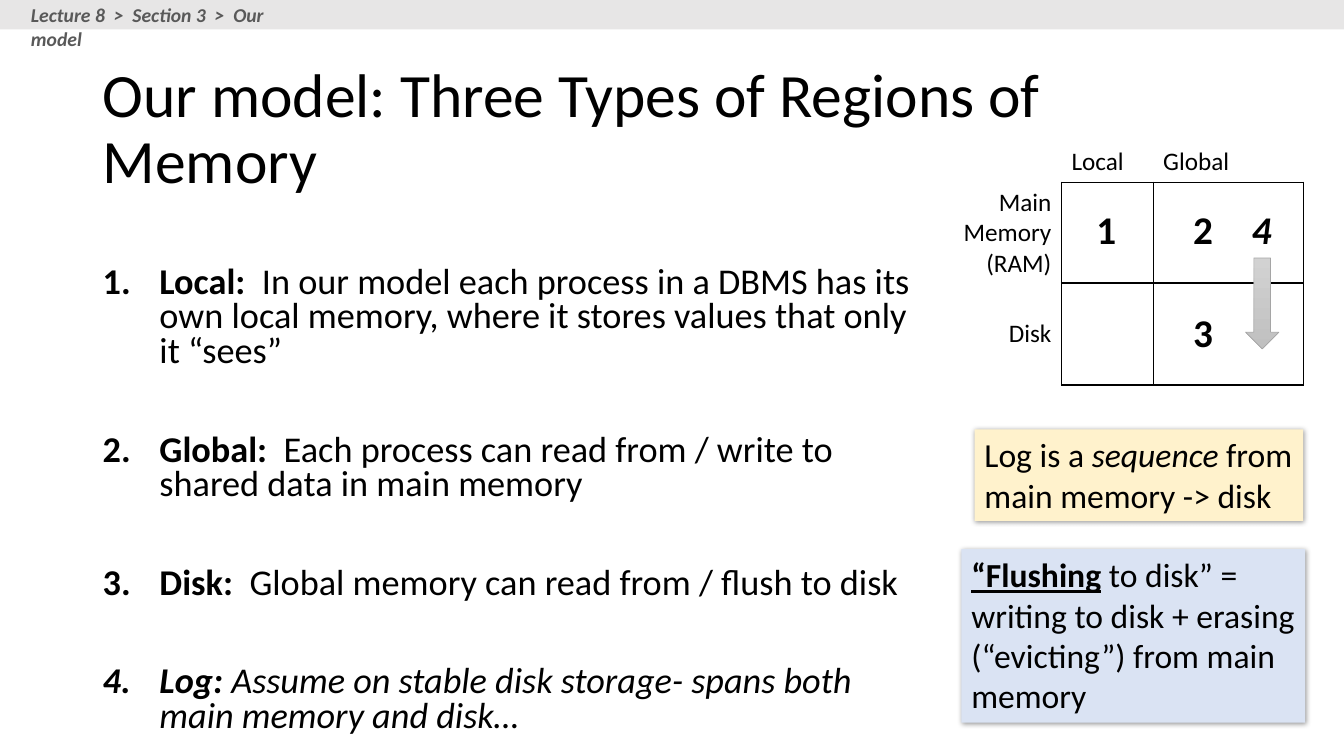
from lxml import etree
from pptx import Presentation
from pptx.dml.color import RGBColor
from pptx.enum.shapes import MSO_SHAPE
from pptx.enum.text import MSO_ANCHOR, PP_ALIGN
from pptx.oxml.ns import qn
from pptx.util import Cm, Pt

RECTANGLE = MSO_SHAPE.RECTANGLE
DOWN_ARROW = MSO_SHAPE.DOWN_ARROW
TOP = MSO_ANCHOR.TOP
MIDDLE = MSO_ANCHOR.MIDDLE
BOTTOM = MSO_ANCHOR.BOTTOM
LEFT = PP_ALIGN.LEFT
RIGHT = PP_ALIGN.RIGHT

BLACK = RGBColor(0x00, 0x00, 0x00)
DARK_GRAY = RGBColor(0x59, 0x59, 0x59)
BAR_GRAY = RGBColor(0xE7, 0xE6, 0xE6)
ARROW_LIGHT = RGBColor(0xD2, 0xD2, 0xD2)
ARROW_DARK = RGBColor(0xC0, 0xC0, 0xC0)
ARROW_LINE = RGBColor(0xA5, 0xA5, 0xA5)
CREAM = RGBColor(0xFF, 0xF2, 0xCC)
PALE_BLUE = RGBColor(0xDA, 0xE3, 0xF3)

FONT = "Calibri"
NO_STYLE = "{2D5ABB26-0587-4C30-8999-92F81FD0307C}"

REGIONS = [
    ("Local: ", " In our model each process in a DBMS has its own local memory, "
                "where it stores values that only it “sees”"),
    ("Global:  ", "Each process can read from / write to shared data in main memory"),
    ("Disk:  ", "Global memory can read from / flush to disk"),
    ("Log: ", "Assume on stable disk storage- spans both main memory and disk…"),
]
GRID = [
    ("", "Local", "Global"),
    ("Main Memory (RAM)", "", ""),
    ("Disk", "", ""),
]
COLUMN_WIDTHS = (2.9, 2.31, 3.78)
ROW_HEIGHTS = (1.75, 2.51, 2.57)
REGION_NUMBERS = [
    ("1", 27.38, 5.05, 1.02),
    ("2", 29.82, 5.05, 1.04),
    ("3", 29.82, 7.65, 1.42),
    ("4", 31.29, 5.05, 1.3),
]


def style_paragraph(paragraph, size, color=BLACK, bold=None, italic=None):
    paragraph.alignment = LEFT
    font = paragraph.font
    font.name = FONT
    font.size = Pt(size)
    font.color.rgb = color
    font.bold = bold
    font.italic = italic


def add_run(paragraph, text, bold=None, italic=None, underline=None):
    run = paragraph.add_run()
    run.text = text
    run.font.bold = bold
    run.font.italic = italic
    run.font.underline = underline


def add_text(slide, left, top, width, height, text, size, **style):
    shape = slide.shapes.add_textbox(Cm(left), Cm(top), Cm(width), Cm(height))
    shape.text_frame.word_wrap = True
    paragraph = shape.text_frame.paragraphs[0]
    add_run(paragraph, text)
    style_paragraph(paragraph, size, **style)
    return shape


def add_shape(slide, kind, left, top, width, height, color=None):
    shape = slide.shapes.add_shape(kind, Cm(left), Cm(top), Cm(width), Cm(height))
    shape.shadow.inherit = False
    shape.line.fill.background()
    if color is not None:
        shape.fill.solid()
        shape.fill.fore_color.rgb = color
    return shape


def add_drop_shadow(shape):
    effects = shape._element.spPr.find(qn("a:effectLst"))
    shadow = etree.SubElement(effects, qn("a:outerShdw"), blurRad="50800",
                              dist="12700", dir="2700000", algn="tl", rotWithShape="0")
    color = etree.SubElement(shadow, qn("a:srgbClr"), val=str(BLACK))
    etree.SubElement(color, qn("a:alpha"), val="40000")


def add_note(slide, left, top, width, height, color, runs):
    shape = add_shape(slide, RECTANGLE, left, top, width, height, color)
    add_drop_shadow(shape)
    shape.text_frame.word_wrap = True
    shape.text_frame.vertical_anchor = TOP
    paragraph = shape.text_frame.paragraphs[0]
    style_paragraph(paragraph, 24)
    for text, style in runs:
        add_run(paragraph, text, **style)


def number_paragraph(paragraph):
    properties = paragraph._p.get_or_add_pPr()
    properties.set("marL", str(Cm(1.43)))
    properties.set("indent", str(-Cm(1.43)))
    bullet = etree.Element(qn("a:buAutoNum"), type="arabicPeriod")
    properties.find(qn("a:defRPr")).addprevious(bullet)


def add_region_list(slide):
    shape = slide.shapes.add_textbox(Cm(2.34), Cm(5.08), Cm(21.26), Cm(13.97))
    frame = shape.text_frame
    frame.word_wrap = True
    frame.margin_top = Cm(1.63)
    for index, (name, description) in enumerate(REGIONS):
        paragraph = frame.paragraphs[0] if index == 0 else frame.add_paragraph()
        italic = True if name.startswith("Log") else None
        style_paragraph(paragraph, 25.9, italic=italic)
        paragraph.line_spacing = 0.8
        paragraph.space_before = Pt(45.3 if index else 0)
        number_paragraph(paragraph)
        add_run(paragraph, name, bold=True, italic=italic)
        add_run(paragraph, description, italic=italic)


def add_borders(cell, sides):
    properties = cell._tc.get_or_add_tcPr()
    for side in sides:
        line = etree.SubElement(properties, qn(f"a:ln{side}"), w=str(Pt(1)))
        fill = etree.SubElement(line, qn("a:solidFill"))
        etree.SubElement(fill, qn("a:srgbClr"), val=str(BLACK))


def add_memory_table(slide):
    frame = slide.shapes.add_table(len(GRID), len(GRID[0]), Cm(23.85), Cm(2.84),
                                   Cm(sum(COLUMN_WIDTHS)), Cm(sum(ROW_HEIGHTS)))
    table = frame.table
    table.first_row = False
    table.horz_banding = False
    table._tbl.tblPr.find(qn("a:tableStyleId")).text = NO_STYLE
    for column, width in zip(table.columns, COLUMN_WIDTHS):
        column.width = Cm(width)
    for row, height in zip(table.rows, ROW_HEIGHTS):
        row.height = Cm(height)
    for row_index, row in enumerate(GRID):
        for column_index, text in enumerate(row):
            cell = table.cell(row_index, column_index)
            if row_index and column_index:
                add_borders(cell, "LRTB")
            elif row_index:
                add_borders(cell, "R")
            elif column_index:
                add_borders(cell, "B")
            cell.fill.background()
            cell.vertical_anchor = MIDDLE if row_index else BOTTOM
            if text:
                paragraph = cell.text_frame.paragraphs[0]
                add_run(paragraph, text)
                style_paragraph(paragraph, 18)
                paragraph.alignment = LEFT if column_index else RIGHT


def add_flush_arrow(slide):
    arrow = add_shape(slide, DOWN_ARROW, 31.39, 6.5, 0.84, 2.29)
    arrow.fill.gradient()
    arrow.fill.gradient_angle = 270
    for stop, color in zip(arrow.fill.gradient_stops, (ARROW_LIGHT, ARROW_DARK)):
        stop.color.rgb = color
    arrow.line.color.rgb = ARROW_LINE
    arrow.line.width = Pt(0.5)


def main():
    presentation = Presentation()
    presentation.slide_width = Cm(33.87)
    presentation.slide_height = Cm(19.05)
    slide = presentation.slides.add_slide(presentation.slide_layouts[6])

    title = add_text(slide, 2.34, 1.45, 29.21, 3.68,
                     "Our model: Three Types of Regions of Memory", 44)
    title.text_frame.vertical_anchor = MIDDLE
    title.text_frame.paragraphs[0].line_spacing = 0.9
    add_region_list(slide)
    add_memory_table(slide)
    add_note(slide, 24.23, 13.84, 8.66, 4.37, PALE_BLUE, [
        ("“Flushing", {"bold": True, "underline": True}),
        (" to disk” = writing to disk + erasing (“evicting”) from main memory", {}),
    ])
    add_shape(slide, RECTANGLE, 0, 0, 33.87, 0.74, BAR_GRAY)
    add_text(slide, 0.53, -0.05, 7.67, 0.86, "Lecture 8  >  Section 3  >  Our model",
             14, color=DARK_GRAY, bold=True, italic=True)
    add_note(slide, 24.56, 10.82, 8.28, 2.31, CREAM, [
        ("Log is a ", {}),
        ("sequence", {"italic": True}),
        (" from main memory -> disk", {}),
    ])
    for number, left, top, width in REGION_NUMBERS:
        add_text(slide, left, top, width, 1.45, number, 28, bold=True,
                 italic=True if number == "4" else None)
    add_flush_arrow(slide)
    presentation.save("out.pptx")


if __name__ == "__main__":
    main()
